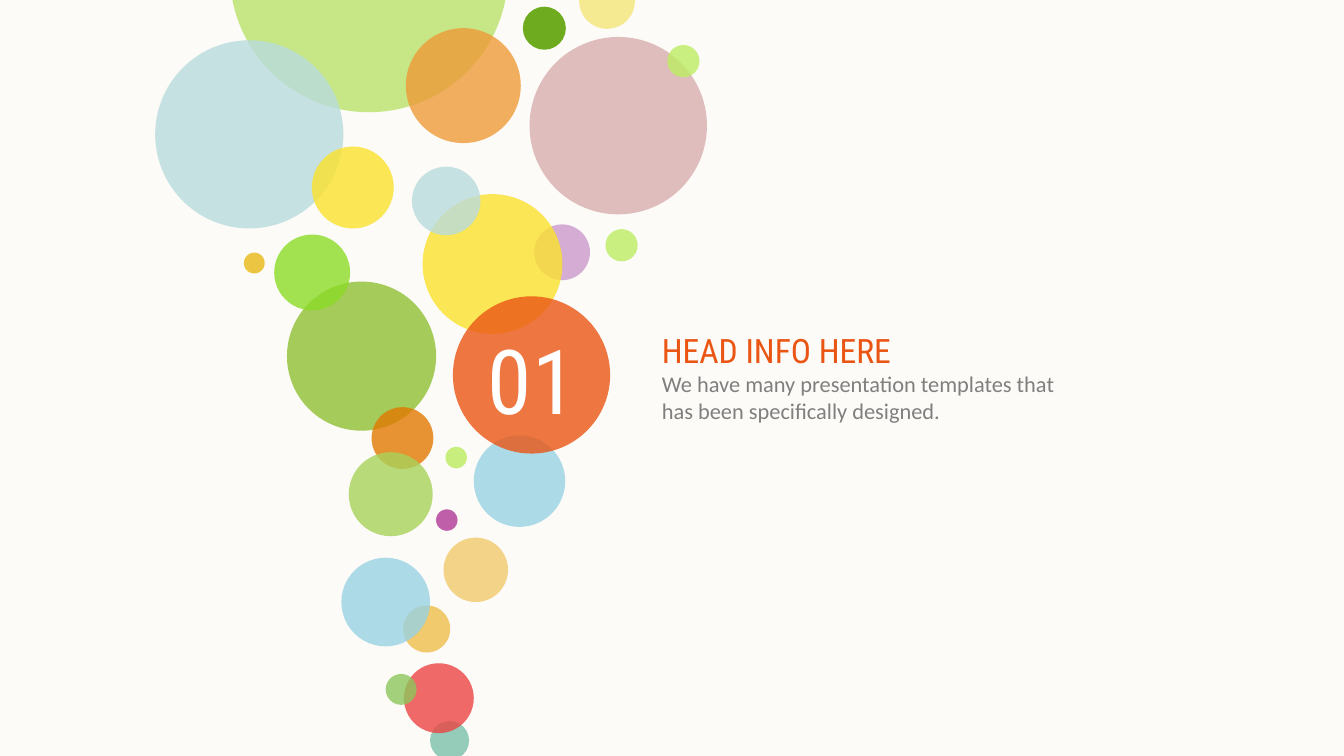
from dataclasses import dataclass

from lxml.etree import SubElement
from pptx import Presentation
from pptx.dml.color import RGBColor
from pptx.enum.shapes import MSO_SHAPE
from pptx.enum.text import MSO_AUTO_SIZE, PP_ALIGN
from pptx.oxml.ns import qn
from pptx.util import Emu, Pt

PX = 4572  # 200 px to the inch


@dataclass(frozen=True)
class Theme:
    paper: str = "FCFBF7"
    accent: str = "EA5514"
    white: str = "FFFFFF"
    grey: str = "7F7F7F"
    yellow: str = "FBE22D"
    mist: str = "B9DBDD"
    sky: str = "98D2E3"
    sand: str = "F0CA6C"
    lime: str = "BCED60"
    head_font: str = "Roboto Condensed"
    body_font: str = "Calibri"
    number_size: int = 48
    head_size: int = 18
    body_size: int = 12
    bubble_alpha: int = 80


class Deck:
    def __init__(self, theme, width, height):
        self.theme = theme
        self.prs = Presentation()
        self.prs.slide_width = Emu(width * PX)
        self.prs.slide_height = Emu(height * PX)

    def add_slide(self):
        self.s = self.prs.slides.add_slide(self.prs.slide_layouts[6])
        fill = self.s.background.fill
        fill.solid()
        fill.fore_color.rgb = RGBColor.from_string(self.theme.paper)

    def bubble(self, x, y, size, color, alpha):
        sp = self.s.shapes.add_shape(
            MSO_SHAPE.OVAL, *(Emu(v * PX) for v in (x, y, size, size)))
        sp.shadow.inherit = False
        sp.line.fill.background()
        sp.fill.solid()
        sp.fill.fore_color.rgb = RGBColor.from_string(color)
        if alpha < 100:
            clr = sp.fill._xPr.find(".//" + qn("a:srgbClr"))
            SubElement(clr, qn("a:alpha"), val=str(alpha * 1000))

    def text(self, x, y, w, h, lines, align=PP_ALIGN.LEFT):
        """Add a text box; lines holds (text, size, font, colour) per paragraph."""
        tf = self.s.shapes.add_textbox(
            *(Emu(v * PX) for v in (x, y, w, h))).text_frame
        tf.word_wrap = True
        tf.auto_size = MSO_AUTO_SIZE.SHAPE_TO_FIT_TEXT
        tf.margin_left = tf.margin_top = tf.margin_right = tf.margin_bottom = 0
        for i, (text, size, font, color) in enumerate(lines):
            p = tf.add_paragraph() if i else tf.paragraphs[0]
            p.text = text
            p.alignment = align
            p.font.size = Pt(size)
            p.font.name = font
            p.font.color.rgb = RGBColor.from_string(color)


def main():
    t = Theme()
    deck = Deck(t, 2000, 1125)
    deck.add_slide()

    # left, top, diameter, colour and, where it is not the usual one, opacity
    bubbles = [
        (342, -247, 414, "BAE36B"),
        (778, 10, 64, "6EAB1F", 100),
        (231, 60, 280, t.mist),
        (604, 42, 171, "ED9B38"),
        (862, -40, 83, "F5EA91", 100),
        (788, 55, 264, "D8AEAF"),
        (427, 419, 222, "A5CB5A", 100),
        (993, 67, 48, "BDED63"),
        (901, 341, 48, "BCED61"),
        (795, 334, 83, "CB99CC"),
        (629, 289, 208, t.yellow),
        (464, 218, 122, t.yellow),
        (408, 349, 113, "8CDB27"),
        (363, 376, 31, "E9B915"),
        (663, 665, 32, t.lime),
        (649, 758, 32, "B03896"),
        (660, 800, 96, t.sand),
        (600, 901, 70, t.sand, 100),
        (640, 1073, 58, "7BBFAA"),
        (601, 987, 104, "EB4544"),
        (574, 1003, 46, "8DC65B"),
        (508, 830, 132, t.sky),
        (613, 248, 102, t.mist),
        (705, 648, 136, t.sky),
        (553, 606, 92, "E27902"),
        (519, 673, 125, "A9D25A"),
        (674, 441, 234, t.accent),
    ]
    for x, y, size, color, *alpha in bubbles:
        deck.bubble(x, y, size, color, *(alpha or [t.bubble_alpha]))

    deck.text(712, 484, 160, 162,
              [("01", t.number_size, t.head_font, t.white)], PP_ALIGN.CENTER)
    deck.text(985, 491, 608, 142, [
        ("HEAD INFO HERE", t.head_size, t.head_font, t.accent),
        ("We have many presentation templates that has been "
         "specifically designed.", t.body_size, t.body_font, t.grey),
    ])
    deck.prs.save("out.pptx")


if __name__ == "__main__":
    main()
